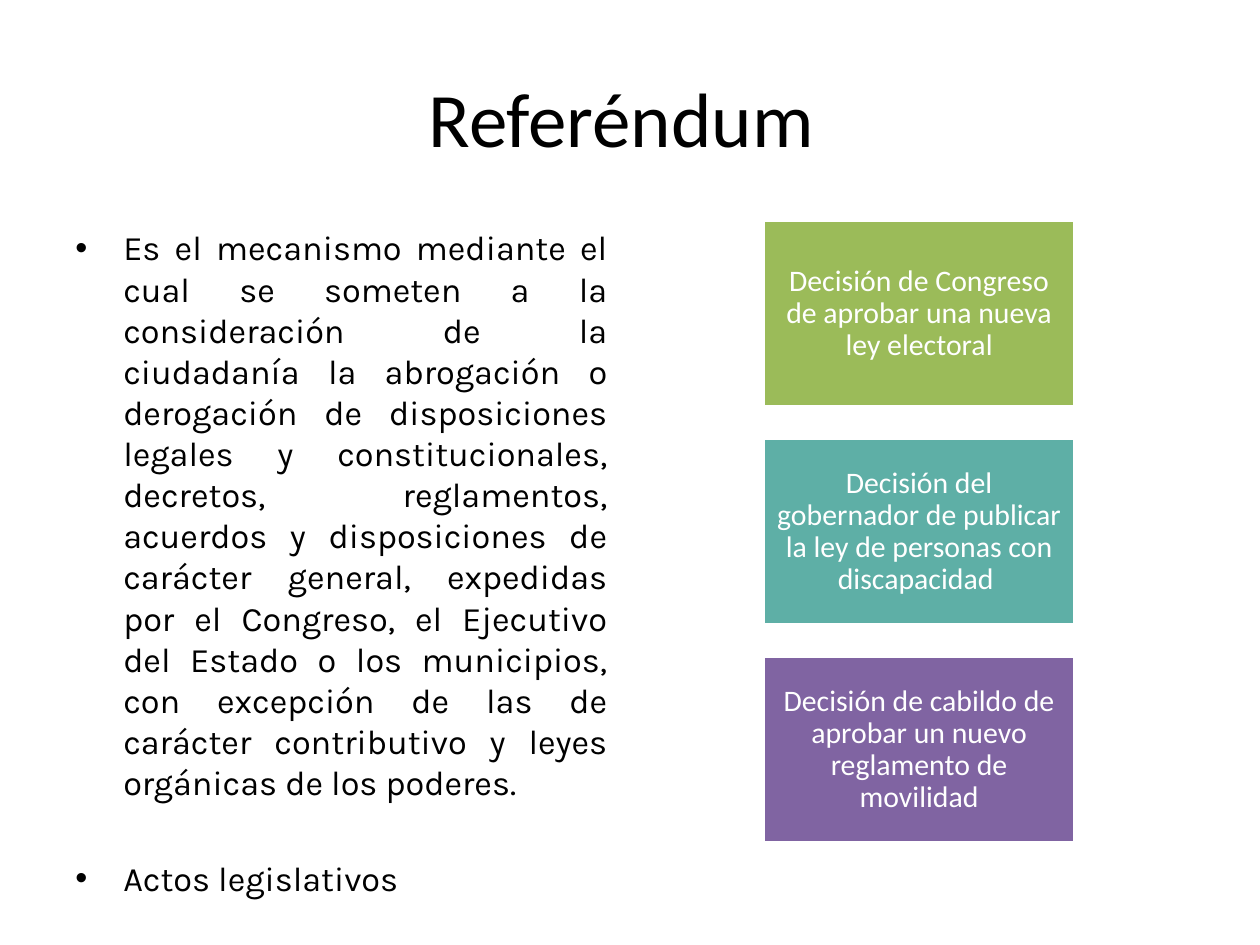
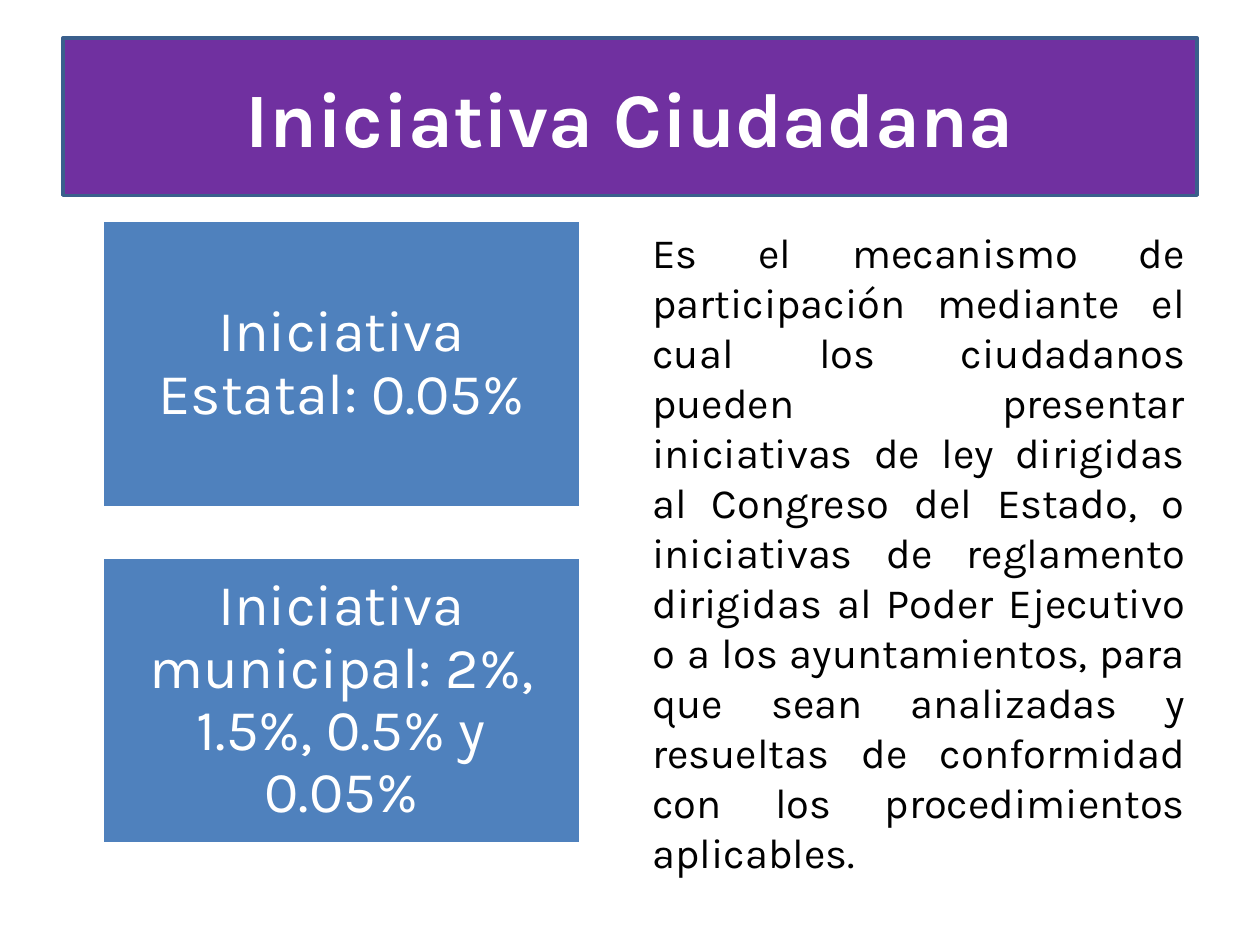
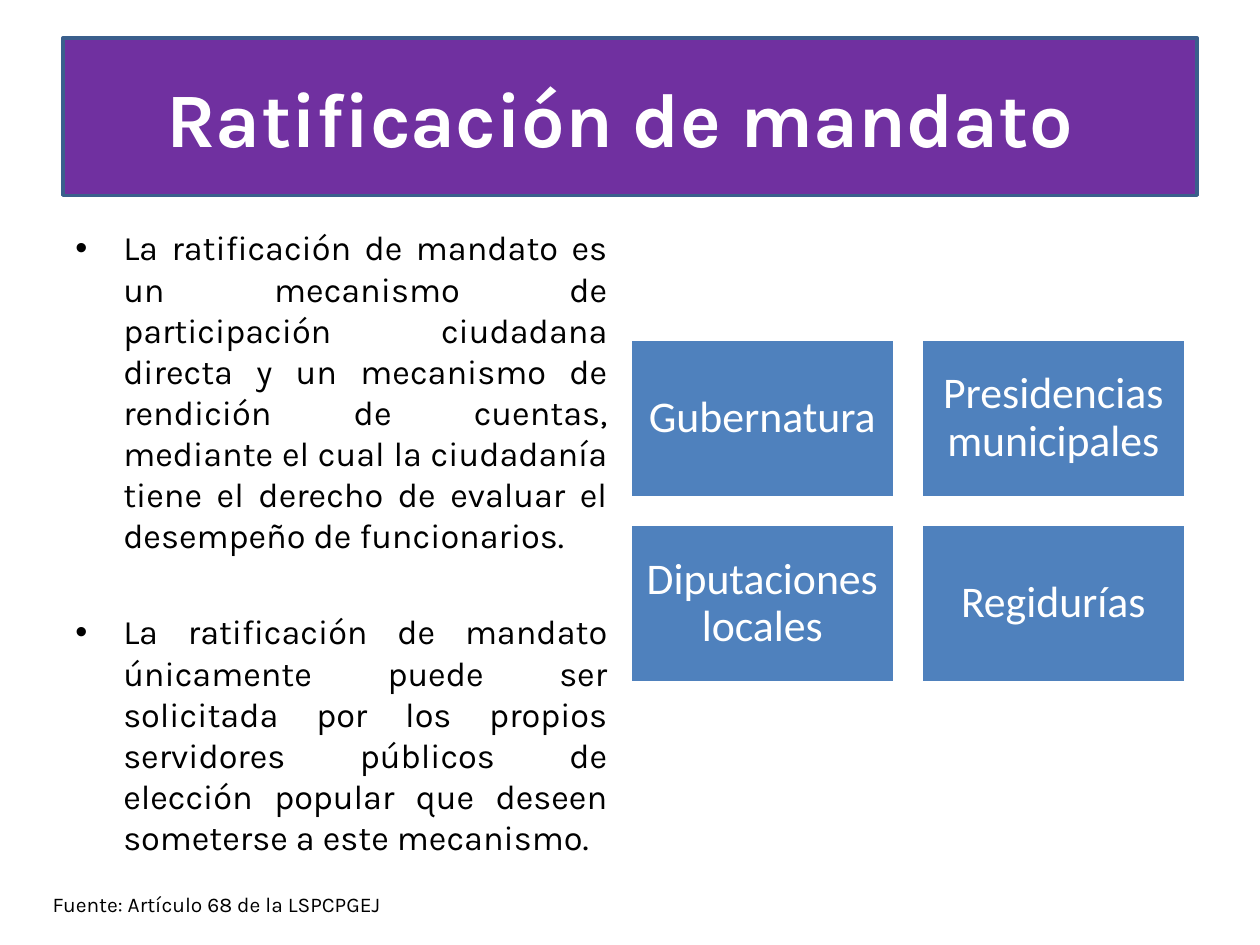
from dataclasses import dataclass

import pptx
import pptx.dml.color
import pptx.enum.shapes
import pptx.enum.text
import pptx.oxml
import pptx.oxml.ns
import pptx.util
from pptx.util import Inches

ALIGN = pptx.enum.text.PP_ALIGN
ANCHOR = pptx.enum.text.MSO_ANCHOR
SHAPE = pptx.enum.shapes.MSO_SHAPE
BLACK, WHITE, BLUE = "000000", "FFFFFF", "4F81BD"
BAND, EDGE = "7030A0", "3A5F8C"
GREEN, TEAL, PURPLE = "9BBB59", "5EAFA6", "8064A2"
SANS, KARLA = "Calibri", "Karla"
INDENT = Inches(0.38)


@dataclass
class Area:
    left: float
    top: float
    width: float
    height: float

    def place(self) -> tuple:
        return tuple(Inches(n) for n in (self.left, self.top, self.width, self.height))


@dataclass
class Style:
    size: float
    font: str = KARLA
    color: str = BLACK
    bold: bool = False
    align: ALIGN = ALIGN.LEFT


@dataclass
class Grid:
    first: Area
    gap: float
    inset: float
    style: Style
    cols: int = 1


TITLE = Area(0.5, 0.3, 9, 1.25)
LEFT = Area(0.5, 1.75, 4.42, 4.95)
RIGHT = Area(5.08, 1.75, 4.42, 4.95)
SOURCE = Area(0.32, 7.03, 4.76, 0.3)
PLAIN = Style(44, SANS, align=ALIGN.CENTER)
STRONG = Style(44, color=WHITE, bold=True, align=ALIGN.CENTER)
LIST = Style(19.6, align=ALIGN.JUSTIFY)
PROSE = Style(23.8, align=ALIGN.JUSTIFY)
NOTE = Style(12)
ACTS = Grid(Area(6.06, 1.75, 2.47, 1.48), 0.25, 0.07,
            Style(17, SANS, WHITE, align=ALIGN.CENTER))
RATES = Grid(Area(0.81, 1.75, 3.8, 2.28), 0.39, 0.14,
             Style(33, KARLA, WHITE, align=ALIGN.CENTER))
POSTS = Grid(Area(5, 2.69, 2.1, 1.26), 0.21, 0.1,
             Style(25, SANS, WHITE, align=ALIGN.CENTER), cols=2)


def tint(code: str):
    return pptx.dml.color.RGBColor.from_string(code)


def bullet(para) -> None:
    props = para._p.get_or_add_pPr()
    props.set("marL", str(INDENT))
    props.set("indent", str(-INDENT))
    space = pptx.oxml.ns.nsdecls("a")
    for tag in ('buFont {} typeface="Arial"', 'buChar {} char="•"'):
        props.append(pptx.oxml.parse_xml(f"<a:{tag.format(space)}/>"))


def write(frame, lines: list[str], style: Style, dots: bool = False) -> None:
    frame.word_wrap = True
    for spot, line in enumerate(lines):
        para = frame.add_paragraph() if spot else frame.paragraphs[0]
        para.text = line
        para.alignment = style.align
        if spot:
            para.space_before = pptx.util.Pt(31.4)
        if dots:
            bullet(para)
        font = para.font
        font.name = style.font
        font.size = pptx.util.Pt(style.size)
        font.bold = style.bold
        font.color.rgb = tint(style.color)


def label(slide, area: Area, lines: list[str], style: Style, dots: bool = False):
    frame = slide.shapes.add_textbox(*area.place()).text_frame
    write(frame, lines, style, dots)
    return frame


def block(slide, kind: SHAPE, area: Area, fill: str, line: str, text: str, style: Style):
    shape = slide.shapes.add_shape(kind, *area.place())
    shape.shadow.inherit = False
    shape.fill.solid()
    shape.fill.fore_color.rgb = tint(fill)
    shape.line.color.rgb = tint(line)
    shape.line.width = pptx.util.Pt(2)
    shape.text_frame.vertical_anchor = ANCHOR.MIDDLE
    write(shape.text_frame, [text], style)
    return shape


def band(slide, text: str) -> None:
    shape = block(slide, SHAPE.ROUNDED_RECTANGLE, TITLE, BAND, EDGE, text, STRONG)
    shape.adjustments[0] = 0


def tiles(slide, grid: Grid, items: list[tuple[str, str]]) -> None:
    base = grid.first
    for spot, (text, fill) in enumerate(items):
        row, col = divmod(spot, grid.cols)
        area = Area(base.left + col * (base.width + grid.gap),
                    base.top + row * (base.height + grid.gap), base.width, base.height)
        frame = block(slide, SHAPE.RECTANGLE, area, fill, WHITE, text, grid.style).text_frame
        frame.margin_left = frame.margin_right = Inches(grid.inset)
        frame.margin_top = frame.margin_bottom = Inches(grid.inset)
        frame.paragraphs[0].line_spacing = 0.9


def vote(slide) -> None:
    label(slide, TITLE, ["Referéndum "], PLAIN).vertical_anchor = ANCHOR.MIDDLE
    label(slide, LEFT, [
        "Es el mecanismo mediante el cual se someten a la consideración de la ciudadanía "
        "la abrogación o derogación de disposiciones legales y constitucionales, decretos, "
        "reglamentos, acuerdos y disposiciones de carácter general, expedidas por el "
        "Congreso, el Ejecutivo del Estado o los municipios, con excepción de las de "
        "carácter contributivo y leyes orgánicas de los poderes.",
        "Actos legislativos",
    ], LIST, dots=True)
    tiles(slide, ACTS, [
        ("Decisión de Congreso de aprobar una nueva ley electoral", GREEN),
        ("Decisión del gobernador de publicar la ley de personas con discapacidad ", TEAL),
        ("Decisión de cabildo de aprobar un nuevo reglamento de movilidad", PURPLE),
    ])


def draft(slide) -> None:
    band(slide, "Iniciativa Ciudadana")
    tiles(slide, RATES, [
        ("Iniciativa Estatal: 0.05%", BLUE),
        ("Iniciativa municipal: 2%, 1.5%, 0.5% y 0.05%", BLUE),
    ])
    label(slide, RIGHT, [
        "Es el mecanismo de participación mediante el cual los ciudadanos pueden presentar "
        "iniciativas de ley dirigidas al Congreso del Estado, o iniciativas de reglamento "
        "dirigidas al Poder Ejecutivo o a los ayuntamientos, para que sean analizadas y "
        "resueltas de conformidad con los procedimientos aplicables.",
    ], PROSE)


def mandate(slide) -> None:
    band(slide, "Ratificación de mandato ")
    label(slide, LEFT, [
        "La ratificación de mandato es un mecanismo de participación ciudadana directa y un "
        "mecanismo de rendición de cuentas, mediante el cual la ciudadanía tiene el derecho "
        "de evaluar el desempeño de funcionarios. ",
        "La ratificación de mandato únicamente puede ser solicitada por los propios "
        "servidores públicos de elección popular que deseen someterse a este mecanismo.",
    ], LIST, dots=True)
    names = ["Gubernatura", "Presidencias municipales", "Diputaciones locales", "Regidurías"]
    tiles(slide, POSTS, [(name, BLUE) for name in names])
    label(slide, SOURCE, ["Fuente: Artículo 68 de la LSPCPGEJ"], NOTE)


def main() -> None:
    deck = pptx.Presentation()
    deck.slide_width, deck.slide_height = Inches(10), Inches(7.5)
    for draw in (vote, draft, mandate):
        draw(deck.slides.add_slide(deck.slide_layouts[6]))
    deck.save("out.pptx")


if __name__ == "__main__":
    main()
